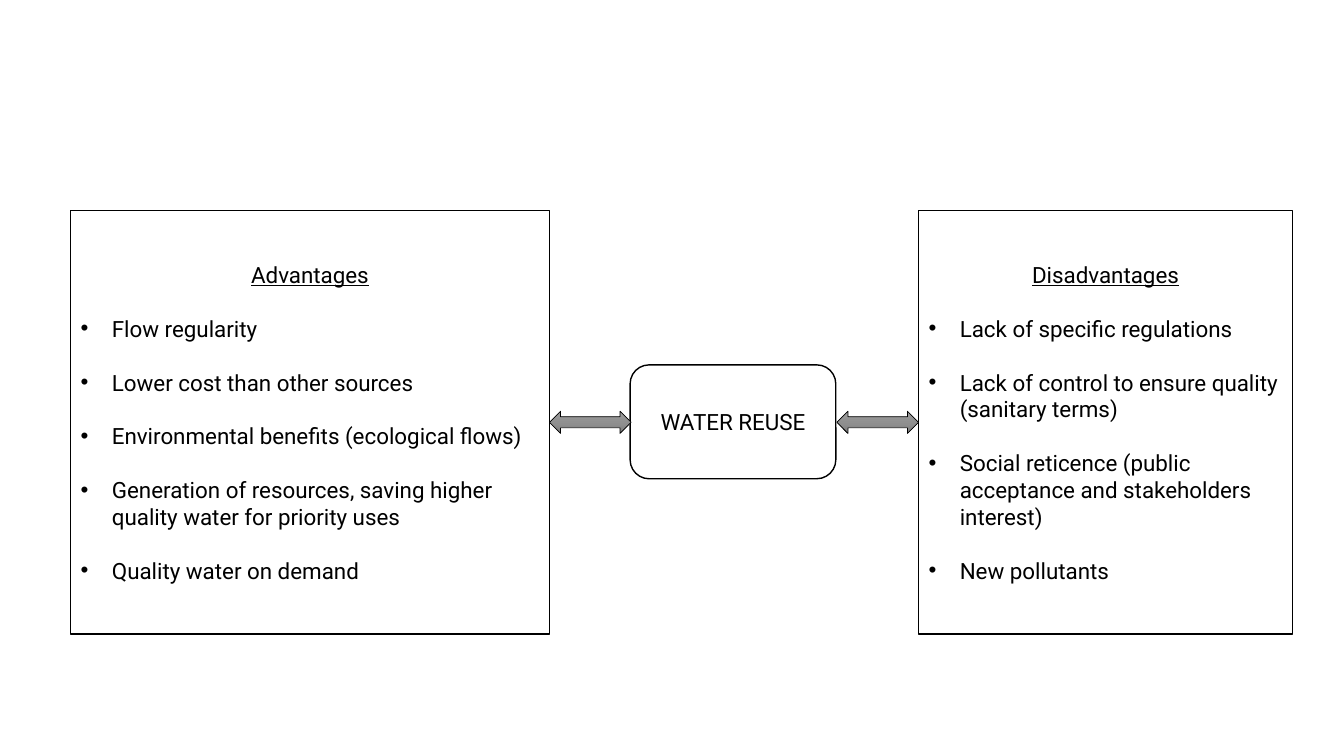
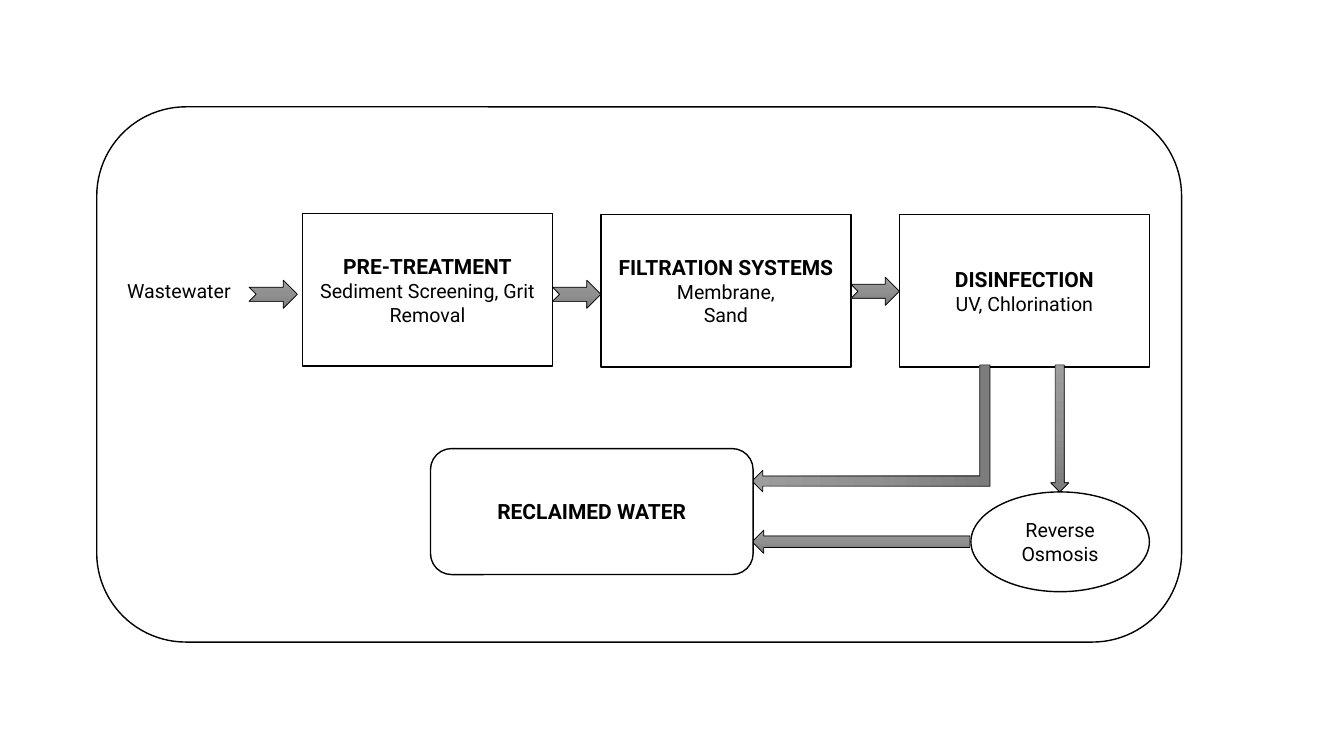
from copy import deepcopy
from dataclasses import dataclass
from typing import Any, NamedTuple

from pptx import Presentation
from pptx.dml.color import RGBColor as Color
from pptx.enum.shapes import MSO_SHAPE as Form
from pptx.enum.text import MSO_ANCHOR as Anchor, MSO_AUTO_SIZE as Fit, PP_ALIGN as Align
from pptx.oxml.ns import qn
from pptx.slide import Slide
from pptx.util import Inches, Pt


@dataclass(frozen=True)
class Theme:
    """Colours, type sizes and line widths that the slides share."""
    ink: Color = Color(0, 0, 0)
    paper: Color = Color(255, 255, 255)
    shade: tuple = ((0, "9D9D9D"), (0.5, "909090"), (1, "7C7C7C"))
    face: str = "Roboto"
    large: float = 16
    head: float = 15
    small: float = 14
    gap: float = 19.2
    edge: float = 1
    thin: float = 0.5


class Area(NamedTuple):
    """A place on the grid of tenth-inch columns and rows."""
    col: float
    row: float
    wide: float
    high: float


class Line(NamedTuple):
    """One paragraph with its size and weight."""
    text: str
    size: float
    bold: bool = False


class Node(NamedTuple):
    """An outlined shape with centred lines."""
    form: Form
    area: Area
    lines: tuple = ()


class Arrow(NamedTuple):
    """A shaded block arrow."""
    form: Form
    area: Area


class Panel(NamedTuple):
    """A framed list with a heading."""
    area: Area
    head: str
    items: tuple


LOOK = Theme()
CELL = Inches(0.1)
HANG = Inches(0.31)


def apply(target: Any, values: dict) -> None:
    """Set each attribute of the target from the values."""
    for name, value in values.items():
        setattr(target, name, value)


def scale(area: Area) -> list[int]:
    """Turn grid cells into slide lengths."""
    return [round(side * CELL) for side in area]


def style(part: Any, size: float, **more: Any) -> None:
    """Give a paragraph the shared face and ink."""
    apply(part.font, {"name": LOOK.face, "size": Pt(size), **more})
    part.font.color.rgb = LOOK.ink


def border(shape: Any, width: float) -> None:
    """Draw the outline of a shape."""
    shape.line.color.rgb = LOOK.ink
    shape.line.width = Pt(width)


def write(frame: Any, lines: tuple) -> None:
    """Write centred lines into a text frame."""
    for spot, line in enumerate(lines):
        part = frame.add_paragraph() if spot else frame.paragraphs[0]
        apply(part, {"text": line.text, "alignment": Align.CENTER})
        style(part, line.size, bold=line.bold)


def add_node(slide: Slide, node: Node) -> None:
    """Draw a white outlined shape and its text."""
    shape = slide.shapes.add_shape(node.form, *scale(node.area))
    shape.shadow.inherit = False
    shape.fill.solid()
    shape.fill.fore_color.rgb = LOOK.paper
    border(shape, LOOK.edge)
    write(shape.text_frame, node.lines)


def add_arrow(slide: Slide, arrow: Arrow) -> Any:
    """Draw a block arrow with the shared three-stop shade."""
    shape = slide.shapes.add_shape(arrow.form, *scale(arrow.area))
    shape.shadow.inherit = False
    shape.fill.gradient()
    shape.fill.gradient_angle = 270
    stops = shape.element.spPr.find(".//" + qn("a:gsLst"))
    stops.insert(1, deepcopy(stops[0]))
    for stop, (place, tone) in zip(shape.fill.gradient_stops, LOOK.shade):
        stop.position = place
        stop.color.rgb = Color.from_string(tone)
    border(shape, LOOK.thin)
    return shape


def add_bend(slide: Slide, area: Area) -> None:
    """Draw the elbow arrow that turns down and left."""
    shape = add_arrow(slide, Arrow(Form.BENT_UP_ARROW, area))
    shape.rotation = 90
    shape.element.spPr.find(qn("a:xfrm")).set("flipV", "1")
    for spot, share in enumerate((0.08, 0.085, 0.084)):
        shape.adjustments[spot] = share


def fill_panel(holder: Any, panel: Panel) -> None:
    """Place a body placeholder and fill in its heading and list."""
    apply(holder, dict(zip(("left", "top", "width", "height"), scale(panel.area))))
    border(holder, LOOK.edge)
    frame = holder.text_frame
    apply(frame, {"auto_size": Fit.NONE, "vertical_anchor": Anchor.MIDDLE})
    write(frame, (Line(panel.head, LOOK.large),))
    head = frame.paragraphs[0]
    head.font.underline = True
    head.space_before = Pt(0)
    form = head._p.get_or_add_pPr()
    apply_list(form, 0)
    form.insert_element_before(form.makeelement(qn("a:buNone"), {}), "a:tabLst", "a:defRPr")
    for item in panel.items:
        part = frame.add_paragraph()
        apply(part, {"text": item, "alignment": Align.LEFT, "space_before": Pt(LOOK.gap)})
        style(part, LOOK.large)
        apply_list(part._p.get_or_add_pPr(), HANG)


def apply_list(form: Any, hang: int) -> None:
    """Set the hanging indent of a paragraph."""
    form.set("marL", str(hang))
    form.set("indent", str(-hang))


def draw_pros(deck: Any) -> None:
    """Build the slide that weighs water reuse."""
    slide = deck.slides.add_slide(deck.slide_layouts[3])
    title = slide.shapes.title.element
    title.getparent().remove(title)
    top, high = 20.9, 42
    panels = (
        Panel(Area(7, top, 47.5, high), "Advantages", (
            "Flow regularity",
            "Lower cost than other sources",
            "Environmental benefits (ecological flows)",
            "Generation of resources, saving higher quality water for priority uses",
            "Quality water on demand")),
        Panel(Area(91.1, top, 37.1, high), "Disadvantages", (
            "Lack of specific regulations",
            "Lack of control to ensure quality (sanitary terms)",
            "Social reticence (public acceptance and stakeholders interest)",
            "New pollutants")),
    )
    for spot, panel in enumerate(panels, 1):
        fill_panel(slide.placeholders[spot], panel)
    add_node(slide, Node(Form.ROUNDED_RECTANGLE, Area(62.5, 36.2, 20.4, 11.3),
                         (Line("WATER REUSE", LOOK.large),)))
    for col in (54.5, 83):
        add_arrow(slide, Arrow(Form.LEFT_RIGHT_ARROW, Area(col, 40.8, 8.1, 2.2)))


def draw_flow(deck: Any) -> None:
    """Build the slide that shows the treatment steps."""
    slide = deck.slides.add_slide(deck.slide_layouts[6])
    add_node(slide, Node(Form.ROUNDED_RECTANGLE, Area(9.6, 10.6, 107.6, 53.1)))
    start, wide, gap = 30, 24.8, 4.8
    steps = (
        (21.2, "PRE-TREATMENT", ("Sediment Screening, Grit Removal",)),
        (21.3, "FILTRATION SYSTEMS", ("Membrane,", "Sand")),
        (21.3, "DISINFECTION", ("UV, Chlorination",)),
    )
    for spot, (row, head, notes) in enumerate(steps):
        lines = (Line(head, LOOK.head, True), *(Line(note, LOOK.small) for note in notes))
        area = Area(start + spot * (wide + gap), row, wide, 15.1)
        add_node(slide, Node(Form.RECTANGLE, area, lines))
    for col, row in ((24.7, 27.8), (start + wide, 27.8), (start + 2 * wide + gap, 27.5)):
        add_arrow(slide, Arrow(Form.NOTCHED_RIGHT_ARROW, Area(col, row, gap, 2.8)))
    label = slide.shapes.add_textbox(*scale(Area(10.3, 27.2, 14.9, 3.4))).text_frame
    apply(label, {"word_wrap": True, "auto_size": Fit.SHAPE_TO_FIT_TEXT})
    write(label, (Line("Wastewater", LOOK.small),))
    add_arrow(slide, Arrow(Form.DOWN_ARROW, Area(104.2, 36.2, 1.8, 12.6)))
    add_node(slide, Node(Form.OVAL, Area(96.3, 48.8, 17.7, 9.9),
                         (Line("Reverse Osmosis", LOOK.small),)))
    add_arrow(slide, Arrow(Form.LEFT_ARROW, Area(74.6, 52.6, 21.6, 2.3)))
    add_bend(slide, Area(80.1, 30.7, 12.6, 23.6))
    add_node(slide, Node(Form.ROUNDED_RECTANGLE, Area(42.7, 44.5, 32, 12.5),
                         (Line("RECLAIMED WATER", LOOK.head, True),)))


def main() -> None:
    """Build and save the deck."""
    deck = Presentation()
    apply(deck, {"slide_width": Inches(13.33), "slide_height": Inches(7.5)})
    draw_pros(deck)
    draw_flow(deck)
    deck.save("out.pptx")


if __name__ == "__main__":
    main()
